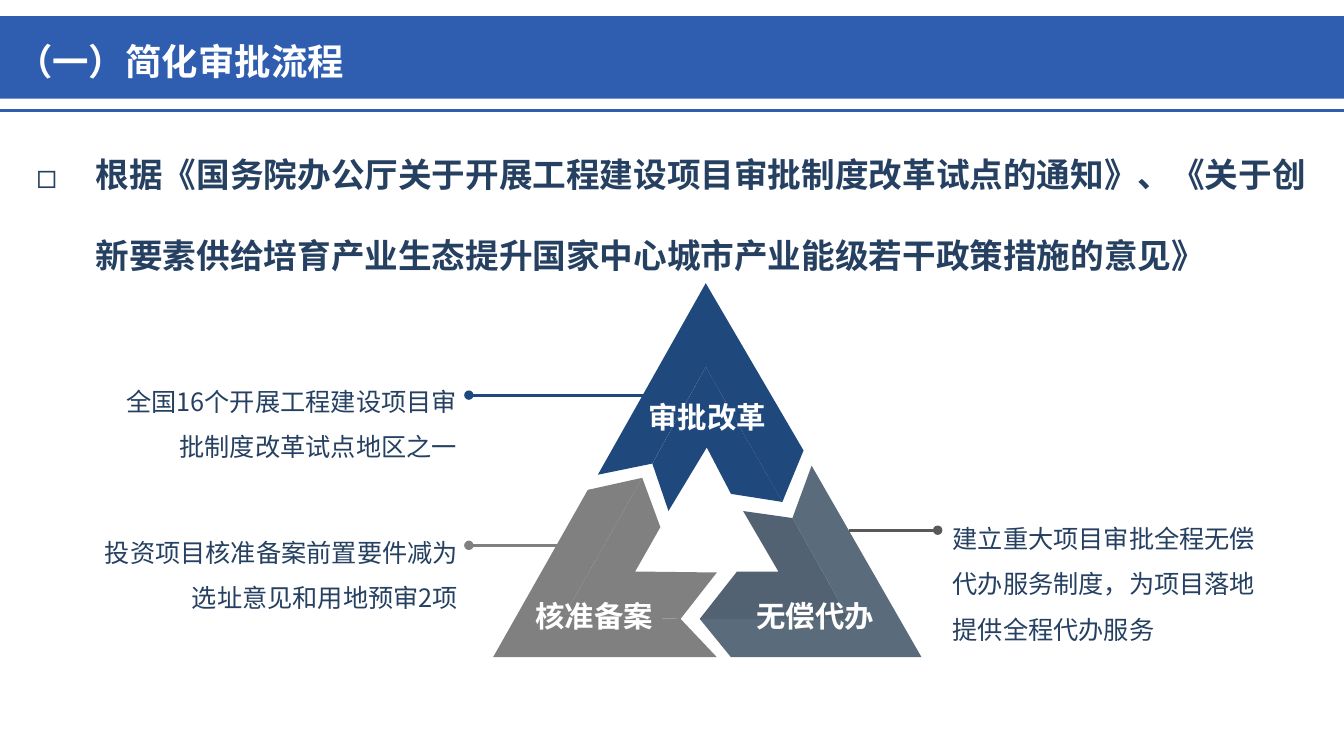
from dataclasses import dataclass

from lxml.etree import SubElement
from pptx import Presentation
from pptx.dml.color import RGBColor
from pptx.enum.shapes import MSO_CONNECTOR, MSO_SHAPE
from pptx.enum.text import MSO_ANCHOR, MSO_AUTO_SIZE, PP_ALIGN
from pptx.oxml.ns import qn
from pptx.util import Pt

PX = 9144  # EMU in one px, 100 px to the inch


@dataclass(frozen=True)
class Theme:
    font: str = "Noto Sans CJK SC"
    band: str = "2F5EB0"
    ink: str = "254061"
    white: str = "FFFFFF"
    navy: str = "1F497D"
    grey: str = "808080"
    slate: str = "5A6B7B"
    dark_slate: str = "526272"
    dark_grey: str = "595959"
    title_size: int = 26
    body_size: int = 24
    label_size: int = 21
    note_size: int = 18
    line_width: float = 2.25


THEME = Theme()

SLIDE_SIZE = (1333, 750)
BAND = (0, 16, 1333, 82)
RULE_Y = 110
TITLE = ("（一）简化审批流程", (6, 20, 511, 72))
BODY = (
    "根据《国务院办公厅关于开展工程建设项目审批制度改革试点的通知》、"
    "《关于创新要素供给培育产业生态提升国家中心城市产业能级若干政策措施的意见》",
    (26, 108, 1281, 159),
)
BODY_INDENT = 59

# Each arm of the triangle is an outer piece and an inner fold: colour, corners
ARM_PIECES = [
    (THEME.navy, [(700, 281), (593, 471), (647, 460), (700, 364), (776, 498), (797, 447)]),
    (THEME.navy, [(701, 444), (663, 507), (647, 460), (700, 364), (776, 498), (725, 490)]),
    (THEME.grey, [(637, 474), (560, 610), (675, 614), (711, 652), (489, 652), (583, 486)]),
    (THEME.grey, [(630, 567), (655, 523), (637, 474), (560, 610), (675, 614), (711, 568)]),
    (THEME.dark_slate, [(772, 567), (731, 567), (694, 614), (842, 614), (786, 514), (737, 507)]),
    (THEME.slate, [(914, 652), (805, 462), (786, 514), (842, 614), (694, 614), (725, 652)]),
]
NOTES = [
    ("建立重大项目审批全程无偿代办服务制度，为项目落地提供全程代办服务",
     (935, 499, 323, 141), PP_ALIGN.LEFT),
    ("全国16个开展工程建设项目审批制度改革试点地区之一",
     (107, 363, 356, 96), PP_ALIGN.RIGHT),
    ("投资项目核准备案前置要件减为选址意见和用地预审2项",
     (81, 513, 383, 101), PP_ALIGN.RIGHT),
]
# start x, end x, y, colour
LEADERS = [
    (842, 930, 526, THEME.dark_grey),
    (639, 465, 392, THEME.navy),
    (552, 465, 541, THEME.grey),
]
LABEL_SIZE = (177, 45)
LABELS = [("审批改革", 613, 391), ("核准备案", 501, 588), ("无偿代办", 720, 588)]


def scaled(*lengths):
    return [length * PX for length in lengths]


def write(box, text, *, size, color, bold=False, align=PP_ALIGN.LEFT,
          spacing=1.0, anchor=MSO_ANCHOR.TOP, bullet=None, indent=0):
    frame = box.text_frame
    frame.word_wrap = True
    frame.auto_size = MSO_AUTO_SIZE.NONE
    frame.vertical_anchor = anchor
    para = frame.paragraphs[0]
    para.alignment = align
    para.line_spacing = spacing
    para.space_before = Pt(0)
    if bullet:
        properties = para._p.get_or_add_pPr()
        properties.set("marL", str(indent * PX))
        properties.set("indent", str(-indent * PX))
        SubElement(properties, qn("a:buFont"), typeface=THEME.font)
        SubElement(properties, qn("a:buChar"), char=bullet)
    span = para.add_run()
    span.text = text
    span.font.size = Pt(size)
    span.font.bold = bold
    span.font.color.rgb = RGBColor.from_string(color)
    span.font.name = THEME.font
    SubElement(span._r.get_or_add_rPr(), qn("a:ea"), typeface=THEME.font)


def place(box, bounds):
    box.left, box.top, box.width, box.height = scaled(*bounds)
    return box


def add_text(slide, text, bounds, **style):
    write(slide.shapes.add_textbox(*scaled(*bounds)), text, **style)


def paint(shape, color):
    shape.shadow.inherit = False
    shape.fill.solid()
    shape.fill.fore_color.rgb = RGBColor.from_string(color)
    shape.line.fill.background()


def add_line(slide, start, end, color, dot=False):
    line = slide.shapes.add_connector(
        MSO_CONNECTOR.STRAIGHT, *scaled(*start), *scaled(*end))
    line.line.color.rgb = RGBColor.from_string(color)
    line.line.width = Pt(THEME.line_width)
    if dot:
        SubElement(line.line._get_or_add_ln(), qn("a:tailEnd"), type="oval")
    SubElement(line._element.spPr, qn("a:effectLst"))


def add_heading(slide):
    band = slide.shapes.add_shape(MSO_SHAPE.RECTANGLE, *scaled(*BAND))
    paint(band, THEME.band)
    slide.shapes._spTree.insert(2, band._element)  # behind the title
    add_line(slide, (0, RULE_Y), (SLIDE_SIZE[0], RULE_Y), THEME.band)

    text, bounds = TITLE
    write(place(slide.shapes.title, bounds), text, size=THEME.title_size,
          color=THEME.white, bold=True, spacing=1.2, anchor=MSO_ANCHOR.MIDDLE)
    text, bounds = BODY
    write(place(slide.placeholders[1], bounds), text, size=THEME.body_size,
          color=THEME.ink, bold=True, spacing=2.0, bullet="◻", indent=BODY_INDENT)


def add_triangle(slide):
    for color, corners in ARM_PIECES:
        outline = slide.shapes.build_freeform(*corners[0], scale=PX)
        outline.add_line_segments(corners[1:], close=True)
        paint(outline.convert_to_shape(), color)
    for text, bounds, align in NOTES:
        add_text(slide, text, bounds, size=THEME.note_size, color=THEME.ink,
                 align=align, spacing=1.5)
    for start_x, end_x, y, color in LEADERS:
        add_line(slide, (start_x, y), (end_x, y), color, dot=True)
    for text, left, top in LABELS:
        add_text(slide, text, (left, top, *LABEL_SIZE), size=THEME.label_size,
                 color=THEME.white, bold=True, align=PP_ALIGN.CENTER)


def main():
    deck = Presentation()
    deck.slide_width, deck.slide_height = scaled(*SLIDE_SIZE)
    slide = deck.slides.add_slide(deck.slide_layouts[1])
    add_heading(slide)
    add_triangle(slide)
    deck.save("out.pptx")


if __name__ == "__main__":
    main()
